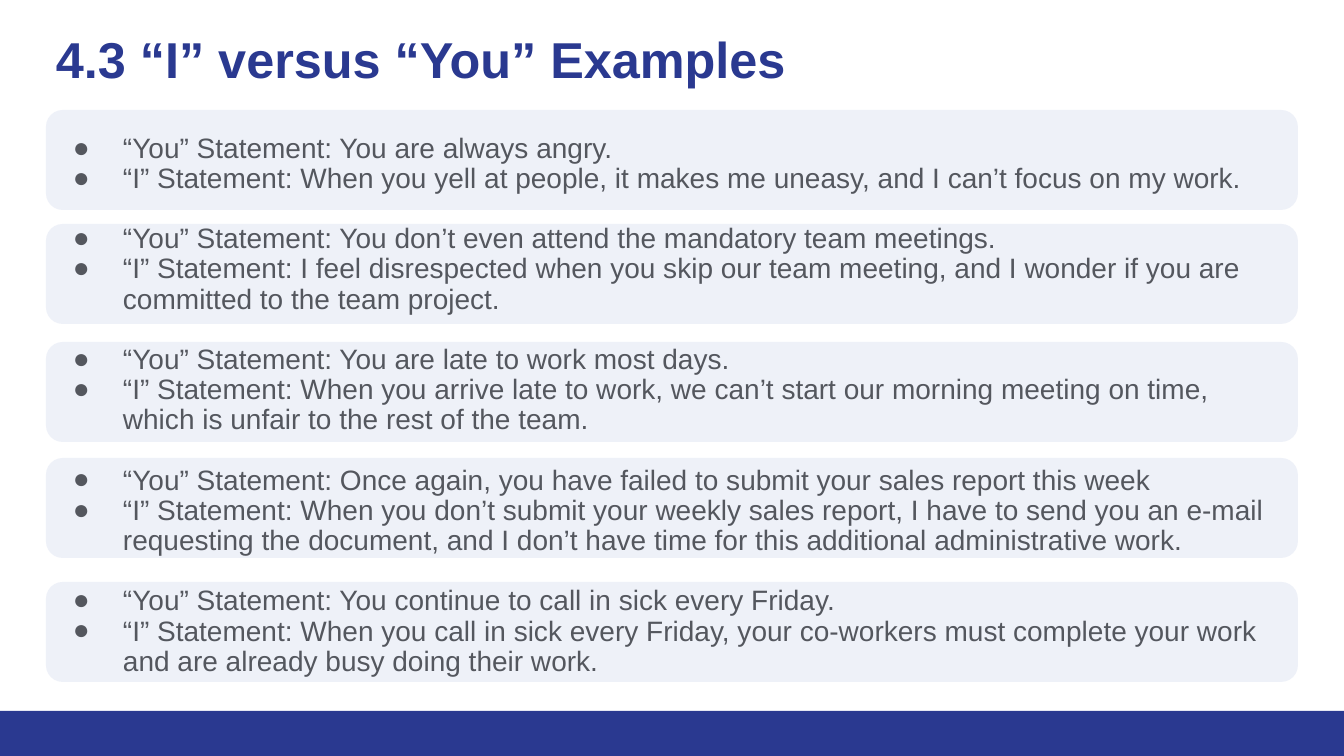
"""Build the "I" versus "You" statement examples slide."""
from lxml import etree
from pptx import Presentation
from pptx.dml.color import RGBColor
from pptx.enum.shapes import MSO_SHAPE
from pptx.enum.text import MSO_ANCHOR, PP_ALIGN
from pptx.oxml.ns import qn
from pptx.util import Emu, Pt

RECTANGLE = MSO_SHAPE.RECTANGLE
ROUNDED = MSO_SHAPE.ROUNDED_RECTANGLE
TOP = MSO_ANCHOR.TOP
LEFT = PP_ALIGN.LEFT

TITLE = "4.3 “I” versus “You” Examples"
EXAMPLES = [
    ("You are always angry.",
     "When you yell at people, it makes me uneasy, and I can’t focus on my work."),
    ("You don’t even attend the mandatory team meetings.",
     "I feel disrespected when you skip our team meeting, and I wonder if you are "
     "committed to the team project."),
    ("You are late to work most days.",
     "When you arrive late to work, we can’t start our morning meeting on time, "
     "which is unfair to the rest of the team."),
    ("Once again, you have failed to submit your sales report this week",
     "When you don’t submit your weekly sales report, I have to send you an e-mail "
     "requesting the document, and I don’t have time for this additional "
     "administrative work."),
    ("You continue to call in sick every Friday.",
     "When you call in sick every Friday, your co-workers must complete your work "
     "and are already busy doing their work."),
]
COLORS = {"navy": "2A3990", "text": "222222", "panel": "C9D3EB"}
FONT = "Arial"
SLIDE_WIDTH, SLIDE_HEIGHT = 1344, 756
MARGIN, CONTENT_WIDTH = 46, 1252
PANEL_TOPS = [110, 224, 342, 458, 582]
PANEL_HEIGHT = 100
PANEL_OPACITY = 30
BAR_HEIGHT = 45
EXAMPLE_GAP = 30
BULLET_INDENT, BULLET_HANG = 67, 50


def px(length):
    return Emu(round(length * 914400 / 100.8))


def add_panel(slide, kind, left, top, width, height, color):
    shape = slide.shapes.add_shape(kind, px(left), px(top), px(width), px(height))
    shape.shadow.inherit = False
    shape.fill.solid()
    shape.fill.fore_color.rgb = RGBColor.from_string(COLORS[color])
    shape.line.fill.background()
    return shape


def add_text_frame(slide, top, height):
    box = slide.shapes.add_textbox(px(MARGIN), px(top), px(CONTENT_WIDTH), px(height))
    frame = box.text_frame
    frame.word_wrap = True
    frame.vertical_anchor = TOP
    frame.margin_left = frame.margin_right = px(10)
    frame.margin_top = frame.margin_bottom = px(10)
    return frame


def style(paragraph, size, color, bold=False):
    paragraph.alignment = LEFT
    paragraph.line_spacing = 0.9
    paragraph.font.name = FONT
    paragraph.font.size = Pt(size)
    paragraph.font.bold = bold
    paragraph.font.color.rgb = RGBColor.from_string(COLORS[color])


def add_bullet(paragraph):
    properties = paragraph._p.get_or_add_pPr()
    properties.set("marL", str(px(BULLET_INDENT)))
    properties.set("indent", str(-px(BULLET_HANG)))
    etree.SubElement(properties, qn("a:buFont")).set("typeface", FONT)
    etree.SubElement(properties, qn("a:buChar")).set("char", "●")


def main():
    presentation = Presentation()
    presentation.slide_width = px(SLIDE_WIDTH)
    presentation.slide_height = px(SLIDE_HEIGHT)
    slide = presentation.slides.add_slide(presentation.slide_layouts[6])

    add_panel(slide, RECTANGLE, 0, SLIDE_HEIGHT - BAR_HEIGHT, SLIDE_WIDTH, BAR_HEIGHT, "navy")

    title = add_text_frame(slide, 25, 90).paragraphs[0]
    title.text = TITLE
    style(title, 36, "navy", bold=True)

    body = add_text_frame(slide, 124, 606)
    paragraph = body.paragraphs[0]
    for index, statements in enumerate(EXAMPLES):
        for speaker, statement in zip(("You", "I"), statements):
            if index or speaker == "I":
                paragraph = body.add_paragraph()
            paragraph.text = f"“{speaker}” Statement: {statement}"
            add_bullet(paragraph)
            style(paragraph, 20, "text")
            if index and speaker == "You":
                paragraph.space_before = px(EXAMPLE_GAP)

    for top in PANEL_TOPS:
        panel = add_panel(slide, ROUNDED, MARGIN, top, CONTENT_WIDTH, PANEL_HEIGHT, "panel")
        color = panel.fill._xPr.find(qn("a:solidFill"))[0]
        etree.SubElement(color, qn("a:alpha")).set("val", str(PANEL_OPACITY * 1000))

    presentation.save("out.pptx")


if __name__ == "__main__":
    main()
